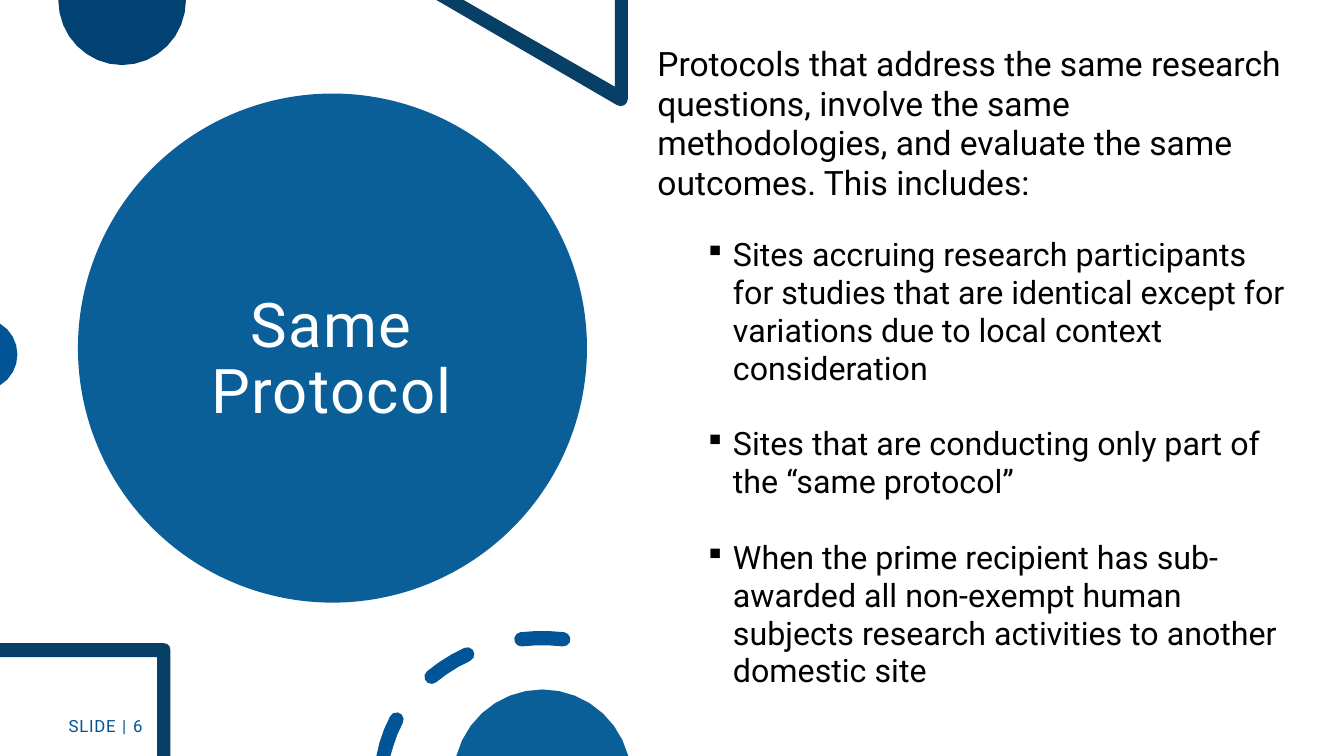
"""Build the Same Protocol slide on a grid of 160 columns by 90 rows."""
import math
from dataclasses import dataclass

import pptx
import pptx.dml.color
import pptx.enum.shapes
import pptx.enum.text
import pptx.oxml
import pptx.oxml.ns
import pptx.util

CELL = 76200
FINE = 100
TEXT = pptx.enum.text


@dataclass(frozen=True)
class Theme:
    """Colours, font and type sizes."""
    font: str = "Roboto"
    white: str = "FFFFFF"
    black: str = "000000"
    blue: str = "0B5F99"
    deep: str = "014273"
    navy: str = "073F66"
    vivid: str = "015596"
    label: str = "015396"
    title: int = 44
    lead: int = 24
    item: int = 23
    small: int = 12


def arc(mid, rx, ry, start, end, steps):
    """Return points on an ellipse, with angles running clockwise."""
    turns = [math.radians(start + (end - start) * i / steps) for i in range(steps + 1)]
    return [(mid[0] + rx * math.cos(t), mid[1] + ry * math.sin(t)) for t in turns]


def dash(mid, rx, ry, start, end, half):
    """Outline a curved dash with round caps, cut at the slide's foot."""
    line = arc(mid, rx, ry, start, end, 3)
    ways = [math.degrees(math.atan2((y - mid[1]) / ry ** 2, (x - mid[0]) / rx ** 2))
            for x, y in line]

    def side(shift):
        return [(x + shift * math.cos(math.radians(w)), y + shift * math.sin(math.radians(w)))
                for (x, y), w in zip(line, ways)]

    tail = arc(line[-1], half, half, ways[-1], ways[-1] + 180, 5)[1:-1]
    head = arc(line[0], half, half, ways[0] + 180, ways[0] + 360, 5)[1:-1]
    ring = [(x, min(y, 90)) for x, y in side(half) + tail + side(-half)[::-1] + head]
    low = [x for x, y in ring if y == 90]
    ends = (min(low), max(low)) if low else ()
    return [(x, y) for x, y in ring if y < 90 or x in ends]


def style(par, runs, size, color, align="LEFT", lines=0.9, before=0, after=0, bullet=None):
    """Fill a paragraph with (text, tracking) runs and format it."""
    par.alignment = getattr(TEXT.PP_ALIGN, align)
    par.line_spacing = lines
    par.space_before = pptx.util.Pt(before)
    par.space_after = pptx.util.Pt(after)
    if bullet:
        props = par._p.get_or_add_pPr()
        props.set("marL", str(pptx.util.Inches(0.75)))
        props.set("indent", str(pptx.util.Inches(-0.25)))
        space = pptx.oxml.ns.nsdecls("a")
        for tag in ('buFont {} typeface="Wingdings" charset="2"', 'buChar {} char="' + bullet + '"'):
            props.append(pptx.oxml.parse_xml(f"<a:{tag.format(space)}/>"))
    for words, track in runs:
        run = par.add_run()
        run.text = words
        run.font.name = Theme.font
        run.font.size = pptx.util.Pt(size)
        run.font.color.rgb = pptx.dml.color.RGBColor.from_string(color)
        if track:
            run._r.get_or_add_rPr().set("spc", str(int(track * 100)))


class Page:
    """Hold the theme and the current slide."""

    def __init__(self, deck, theme):
        self.theme = theme
        self.shapes = deck.slides.add_slide(deck.slide_layouts[6]).shapes

    def paint(self, shape, color):
        """Give a shape a plain fill."""
        shape.shadow.inherit = False
        shape.fill.solid()
        shape.fill.fore_color.rgb = pptx.dml.color.RGBColor.from_string(color)
        shape.line.fill.background()

    def disc(self, box, color):
        """Add an ellipse."""
        kind = pptx.enum.shapes.MSO_SHAPE.OVAL
        self.paint(self.shapes.add_shape(kind, *[round(v * CELL) for v in box]), color)

    def outline(self, color, *rings):
        """Add one freeform made of closed rings."""
        rings = [[(round(x * FINE), round(y * FINE)) for x, y in ring] for ring in rings]
        pen = self.shapes.build_freeform(*rings[0][0], scale=CELL / FINE)
        for i, ring in enumerate(rings):
            if i:
                pen.move_to(*ring[0])
            pen.add_line_segments(ring[1:], close=True)
        self.paint(pen.convert_to_shape(), color)

    def text(self, box, pars, anchor="TOP"):
        """Add a text box from (runs, format) pairs."""
        frame = self.shapes.add_textbox(*[round(v * CELL) for v in box]).text_frame
        frame.word_wrap = True
        frame.vertical_anchor = getattr(TEXT.MSO_ANCHOR, anchor)
        for i, (runs, form) in enumerate(pars):
            style(frame.add_paragraph() if i else frame.paragraphs[0], runs, **form)


def main():
    """Draw the slide and save it."""
    deck = pptx.Presentation()
    deck.slide_width, deck.slide_height = 160 * CELL, 90 * CELL
    look = Theme()
    page = Page(deck, look)

    page.disc((9.28, 11.14, 60.6, 60.6), look.blue)
    page.text((18.24, 16.2, 42.5, 53.4), [
        ([("Same Protocol", 1)], dict(size=look.title, color=look.white, align="CENTER"))],
        "MIDDLE")

    page.outline(look.deep, arc((14.54, 0), 7.6, 7.75, 0, 180, 16))
    page.outline(look.navy, [(74.74, 0), (73.2, 0), (73.2, 10.32), (55.2, 0), (51.96, 0)]
                 + arc((73.9, 11.8), 0.84, 0.84, 120, 0, 4))
    page.outline(look.vivid, arc((-2.2, 42.2), 4.28, 4.28, -59, 59, 8))

    plain = dict(size=look.item, color=look.black, lines=0.98, bullet="§")
    items = [
        ("Sites accruing research participants for studies that are identical except for "
         "variations due to local context consideration", 23.5),
        ("Sites that are conducting only part of the “same protocol”", 27),
        ("When the prime recipient has sub-awarded all non-exempt human subjects research "
         "activities to another domestic site", 27)]
    lead = ("Protocols that address the same research questions, involve the same "
            "methodologies, and evaluate the same outcomes. This includes:")
    page.text((77.08, 4.8, 77.9, 78.8), [
        ([(lead, 0)], dict(size=look.lead, color=look.black, lines=0.98))]
        + [([(words, 0)], dict(plain, before=gap)) for words, gap in items])

    page.outline(look.navy, [(0, 76.57)] + arc((19.5, 77.35), 0.78, 0.78, -90, 0, 3)
                 + [(20.28, 90), (18.72, 90), (18.72, 78.24), (0, 78.24)])
    hub = (64.56, 92.76)
    page.outline(look.vivid, *[dash(hub, 19.15, 16.8, a, b, 0.85)
                               for a, b in ((189, 205), (226.5, 242.2), (262.5, 277.5))])
    page.outline(look.blue, arc(hub, 10.6, 10.68, 195, 345, 14))
    page.text((7, 84.1, 11.2, 4.8), [
        ([("SLIDE", 0.5), (" | ", 1), ("6", 0)],
         dict(size=look.small, color=look.label, after=6))], "MIDDLE")

    deck.save("out.pptx")


if __name__ == "__main__":
    main()
